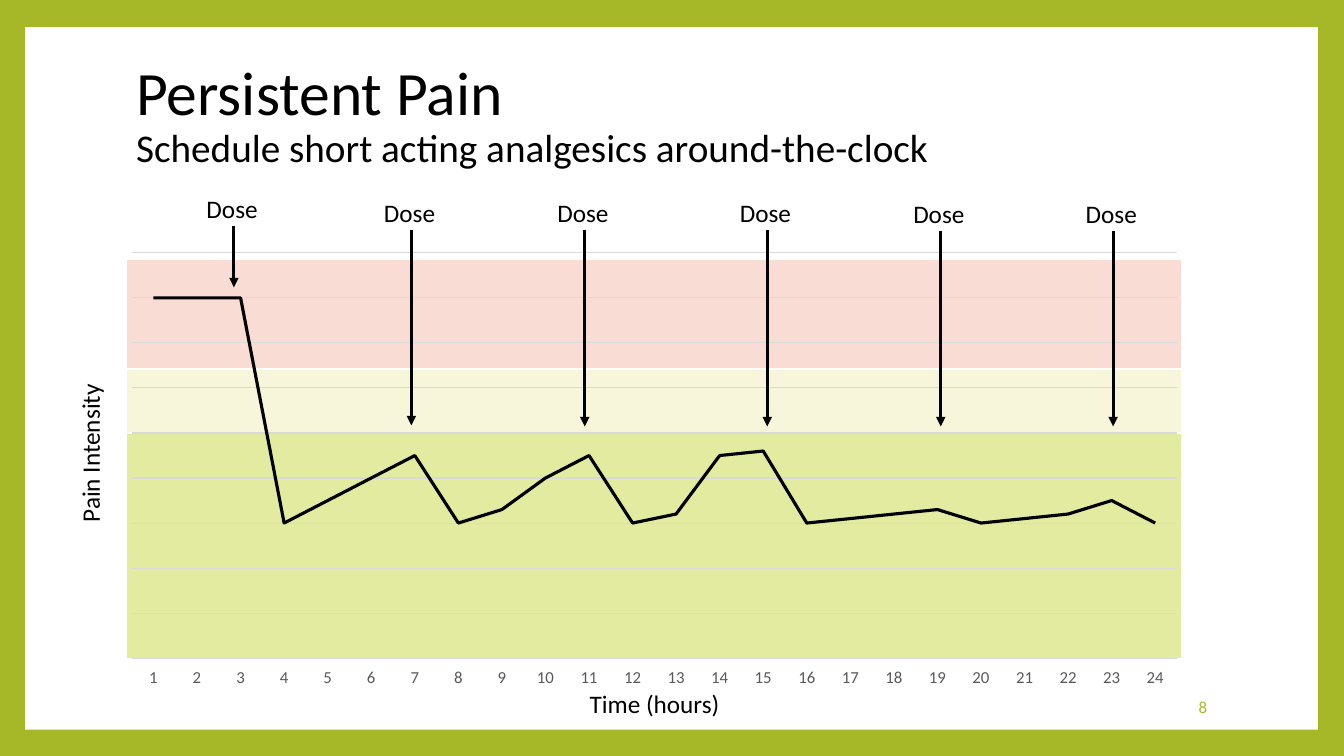
from dataclasses import dataclass

from lxml.etree import SubElement, fromstring
from pptx import Presentation
from pptx.chart.data import CategoryChartData
from pptx.dml.color import RGBColor
from pptx.enum.chart import XL_CHART_TYPE, XL_TICK_LABEL_POSITION, XL_TICK_MARK
from pptx.enum.shapes import MSO_CONNECTOR, MSO_SHAPE
from pptx.enum.text import MSO_ANCHOR, MSO_AUTO_SIZE, PP_ALIGN
from pptx.oxml.ns import qn
from pptx.util import Emu, Pt

FONT = "Calibri"
BLACK, WHITE, GREEN, GRID = "000000", "FFFFFF", "A6B727", "D9D9D9"
C_NS = "http://schemas.openxmlformats.org/drawingml/2006/chart"


@dataclass
class Box:
    left: int
    top: int
    width: int
    height: int


@dataclass
class Band:
    top: int
    height: int
    fill: str


@dataclass
class Dose:
    x: int
    top: int
    end: int


@dataclass
class Label:
    text: str
    box: Box
    size: int = 18
    color: str = BLACK
    align: PP_ALIGN = PP_ALIGN.LEFT
    turn: int = 0
    anchor: MSO_ANCHOR = MSO_ANCHOR.TOP


PANEL = Box(25, 27, 1282, 697)
BANDS = [Band(257, 109, "F9DDD4"), Band(366, 64, "F7F6DA"), Band(430, 224, "E2EBA0")]
DOSES = [Dose(232, 187, 285), Dose(408, 191, 422), Dose(580, 191, 423),
         Dose(761, 191, 423), Dose(933, 192, 423), Dose(1104, 192, 423)]
LABELS = [
    Label("8", Box(1020, 681, 187, 40), 12, GREEN, PP_ALIGN.RIGHT, anchor=MSO_ANCHOR.MIDDLE),
    Label("Pain Intensity", Box(8, 427, 162, 40), turn=270),
    Label("Time (hours)", Box(575, 678, 152, 40)),
]
PAIN = [8, 8, 8, 3, 3.5, 4, 4.5, 3, 3.3, 4, 4.5, 3,
        3.2, 4.5, 4.6, 3, 3.1, 3.2, 3.3, 3, 3.1, 3.2, 3.5, 3]


def px(count: int) -> Emu:
    """One px is a hundredth of an inch."""
    return Emu(count * 9144)


def rgb(color: str) -> RGBColor:
    return RGBColor.from_string(color)


def frame(box: Box) -> tuple:
    return px(box.left), px(box.top), px(box.width), px(box.height)


def style(font, size: int, color: str) -> None:
    font.name, font.size, font.bold = FONT, Pt(size), False
    font.color.rgb = rgb(color)


def stroke(line, color: str, width: float) -> None:
    line.color.rgb = rgb(color)
    line.width = Pt(width)


def add_run(para, text: str, size: int, color: str = BLACK) -> None:
    run = para.add_run()
    run.text = text
    style(run.font, size, color)


def add_rect(slide, box: Box, fill: str):
    rect = slide.shapes.add_shape(MSO_SHAPE.RECTANGLE, *frame(box))
    rect.shadow.inherit = False
    rect.fill.solid()
    rect.fill.fore_color.rgb = rgb(fill)
    rect.line.fill.background()
    return rect


def add_label(slide, label: Label) -> None:
    shape = slide.shapes.add_textbox(*frame(label.box))
    shape.rotation = label.turn
    text = shape.text_frame
    text.word_wrap = label.align == PP_ALIGN.RIGHT
    text.vertical_anchor = label.anchor
    para = text.paragraphs[0]
    para.alignment = label.align
    add_run(para, label.text, label.size, label.color)


def add_dose(slide, dose: Dose) -> None:
    x = px(dose.x)
    arrow = slide.shapes.add_connector(
        MSO_CONNECTOR.STRAIGHT, x, px(dose.top + 37), x, px(dose.end))
    stroke(arrow.line, BLACK, 2.25)
    SubElement(arrow.line.fill and arrow.element.spPr.find(qn("a:ln")),
               qn("a:tailEnd"), type="triangle")
    SubElement(arrow.element.spPr, qn("a:effectLst"))
    add_label(slide, Label("Dose", Box(dose.x - 37, dose.top, 73, 40)))


def set_title(slide) -> None:
    title = slide.shapes.title
    title.left, title.top, title.width, title.height = frame(Box(125, 42, 1080, 148))
    text = title.text_frame
    text.word_wrap = True
    text.auto_size = MSO_AUTO_SIZE.NONE
    text.vertical_anchor = MSO_ANCHOR.MIDDLE
    para = text.paragraphs[0]
    para.alignment, para.line_spacing = PP_ALIGN.LEFT, 0.9
    add_run(para, "Persistent Pain ", 44)
    para.add_line_break()
    add_run(para, "Schedule short acting analgesics around-the-clock", 28)
    # Bring the title in front of the panel
    title.element.getparent().append(title.element)


def add_graph(slide) -> None:
    data = CategoryChartData()
    data.categories = [str(hour + 1) for hour in range(len(PAIN))]
    data.add_series("Series 1", PAIN)
    chart = slide.shapes.add_chart(
        XL_CHART_TYPE.LINE, *frame(Box(109, 242, 1080, 442)), data).chart
    chart.has_legend = chart.has_title = False
    style(chart.font, 10, BLACK)

    # Pain line
    plot = chart.plots[0]
    plot.vary_by_categories = False
    series = plot.series[0]
    series.smooth = False
    stroke(series.format.line, BLACK, 2.25)

    # Axes
    hours = chart.category_axis
    hours.major_tick_mark = hours.minor_tick_mark = XL_TICK_MARK.NONE
    hours.tick_label_position = XL_TICK_LABEL_POSITION.LOW
    style(hours.tick_labels.font, 12, "595959")
    stroke(hours.format.line, GRID, 0.75)
    level = chart.value_axis
    level.minimum_scale, level.maximum_scale, level.major_unit = 0, 9, 1
    level.has_major_gridlines = True
    stroke(level.major_gridlines.format.line, GRID, 0.75)
    level.visible = False

    # Fixed plot area
    area = chart.element.find(".//" + qn("c:plotArea"))
    old = area.find(qn("c:layout"))
    if old is not None:
        area.remove(old)
    marks = [("layoutTarget", "inner"), ("xMode", "edge"), ("yMode", "edge"),
             ("x", 0.02), ("y", 0.02), ("w", 0.96), ("h", 0.91)]
    parts = "".join(f'<c:{name} val="{val}"/>' for name, val in marks)
    area.insert(0, fromstring(
        f'<c:layout xmlns:c="{C_NS}"><c:manualLayout>{parts}</c:manualLayout></c:layout>'))


def main() -> None:
    deck = Presentation()
    deck.slide_width, deck.slide_height = px(1333), px(750)
    slide = deck.slides.add_slide(deck.slide_layouts[5])

    # Green border around a white panel
    back = slide.background.fill
    back.solid()
    back.fore_color.rgb = rgb(GREEN)
    add_rect(slide, PANEL, WHITE)

    # Pain bands
    for band in BANDS:
        rect = add_rect(slide, Box(125, band.top, 1047, band.height), band.fill)
        stroke(rect.line, WHITE, 1.5)

    set_title(slide)
    add_graph(slide)
    for label in LABELS:
        add_label(slide, label)
    for dose in DOSES:
        add_dose(slide, dose)
    deck.save("out.pptx")


if __name__ == "__main__":
    main()
